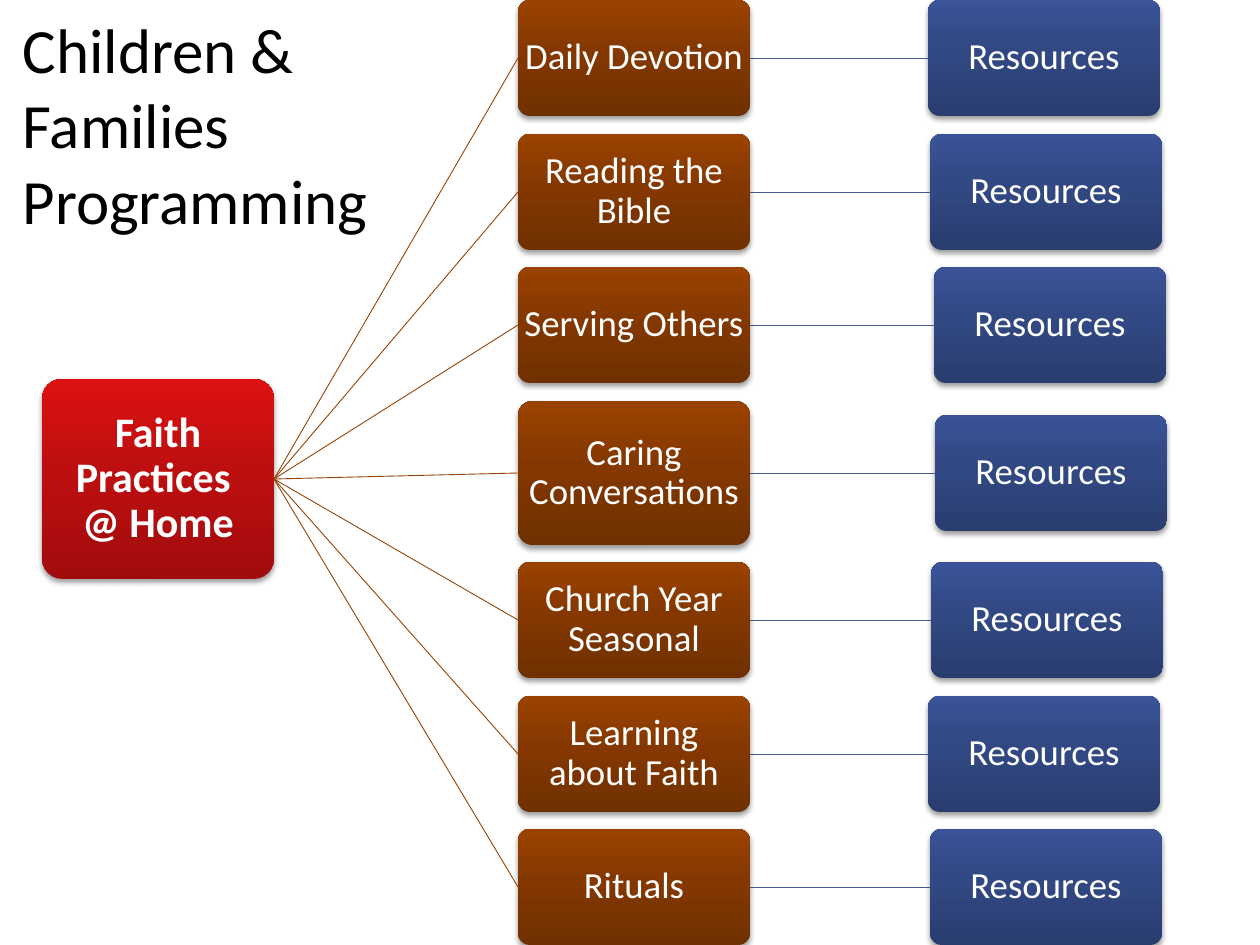
from copy import deepcopy

from lxml import etree
from pptx import Presentation
from pptx.dml.color import RGBColor
from pptx.enum.shapes import MSO_CONNECTOR, MSO_SHAPE
from pptx.enum.text import MSO_ANCHOR, MSO_AUTO_SIZE, PP_ALIGN
from pptx.oxml.ns import qn
from pptx.util import Pt

PX = 914400 / 126  # EMU in one px
ROUND_RECT = MSO_SHAPE.ROUNDED_RECTANGLE
STRAIGHT = MSO_CONNECTOR.STRAIGHT
LEFT_SIDE, RIGHT_SIDE = 1, 3

BLACK = RGBColor(0x00, 0x00, 0x00)
WHITE = RGBColor(0xFF, 0xFF, 0xFF)
BROWN_LINE = RGBColor(0x96, 0x43, 0x05)
BLUE_LINE = RGBColor(0x47, 0x5A, 0x8D)
# Gradients run from the bottom of a box to its top
RED = RGBColor(0xA1, 0x0C, 0x0D), RGBColor(0xBE, 0x0F, 0x10), RGBColor(0xDD, 0x11, 0x12)
BROWN = RGBColor(0x70, 0x30, 0x00), RGBColor(0x84, 0x38, 0x00), RGBColor(0x9A, 0x42, 0x00)
BLUE = RGBColor(0x2A, 0x3D, 0x6F), RGBColor(0x31, 0x48, 0x83), RGBColor(0x3A, 0x53, 0x99)

BOX_WIDTH, BOX_HEIGHT = 232, 116
PRACTICE_LEFT = 518
# label, top, height, left of its resources box
PRACTICES = [
    ("Daily Devotion", 0, BOX_HEIGHT, 928),
    ("Reading the Bible", 134, BOX_HEIGHT, 930),
    ("Serving Others", 267, BOX_HEIGHT, 934),
    ("Caring Conversations", 401, 144, 935),
    ("Church Year Seasonal", 562, BOX_HEIGHT, 931),
    ("Learning about Faith", 696, BOX_HEIGHT, 928),
    ("Rituals", 829, BOX_HEIGHT, 930),
]

prs = Presentation()
prs.slide_width, prs.slide_height = round(1260 * PX), round(945 * PX)
slide = prs.slides.add_slide(prs.slide_layouts[5])


def add_box(label, left, top, height, gradient, size=21, bold=False, inset=1):
    """Add a rounded box with a three-stop gradient, a soft shadow and a label."""
    box = slide.shapes.add_shape(
        ROUND_RECT, *(round(n * PX) for n in (left, top, BOX_WIDTH, height)))
    box.adjustments[0] = 0.1
    box.line.fill.background()
    box.fill.gradient()
    box.fill.gradient_angle = 90
    properties = box._element.spPr
    first_stop = properties.find(".//" + qn("a:gs"))
    first_stop.addnext(deepcopy(first_stop))
    for stop, position, color in zip(box.fill.gradient_stops, (0, 0.55, 1), gradient):
        stop.position = position
        stop.color.rgb = color

    box.shadow.inherit = False
    shadow = etree.SubElement(properties.find(qn("a:effectLst")), qn("a:outerShdw"),
                              blurRad="40000", dist="25400", dir="5400000", rotWithShape="0")
    shade = etree.SubElement(shadow, qn("a:srgbClr"), val="000000")
    etree.SubElement(shade, qn("a:alpha"), val="38000")

    frame = box.text_frame
    frame.text = label
    frame.word_wrap = True
    frame.vertical_anchor = MSO_ANCHOR.MIDDLE
    frame.margin_left = frame.margin_right = round(inset * PX)
    frame.margin_top = frame.margin_bottom = round(inset * PX)
    paragraph = frame.paragraphs[0]
    paragraph.alignment = PP_ALIGN.CENTER
    paragraph.line_spacing = 0.9
    for run in paragraph.runs:
        run.font.name = "Calibri"
        run.font.size = Pt(size)
        run.font.bold = bold
        run.font.color.rgb = WHITE
    return box


def join(start, end, color):
    """Draw a thin line from the right of one box to the left of another."""
    link = slide.shapes.add_connector(STRAIGHT, 0, 0, 0, 0)
    link.begin_connect(start, RIGHT_SIDE)
    link.end_connect(end, LEFT_SIDE)
    link.line.color.rgb = color
    link.line.width = Pt(0.5)
    etree.SubElement(link._element.spPr, qn("a:effectLst"))


# Title
title = slide.shapes.title
title.left, title.top, title.width, title.height = (
    round(n * PX) for n in (10, 4, 442, 242))
title_frame = title.text_frame
title_frame.text = "Children & Families\nProgramming"
title_frame.word_wrap = True
title_frame.auto_size = MSO_AUTO_SIZE.NONE
title_frame.vertical_anchor = MSO_ANCHOR.TOP
for paragraph in title_frame.paragraphs:
    paragraph.alignment = PP_ALIGN.LEFT
    for run in paragraph.runs:
        run.font.name = "Calibri"
        run.font.size = Pt(36)
        run.font.color.rgb = BLACK

# Tree: faith at home, its practices, and resources for each
home = add_box("Faith Practices \v@ Home", 42, 379, 200, RED, size=24, bold=True, inset=2)
for label, top, height, resources_left in PRACTICES:
    practice = add_box(label, PRACTICE_LEFT, top, height, BROWN)
    resources_top = top + (height - BOX_HEIGHT) // 2
    resources = add_box("Resources", resources_left, resources_top, BOX_HEIGHT, BLUE)
    join(home, practice, BROWN_LINE)
    join(practice, resources, BLUE_LINE)

prs.save("out.pptx")
